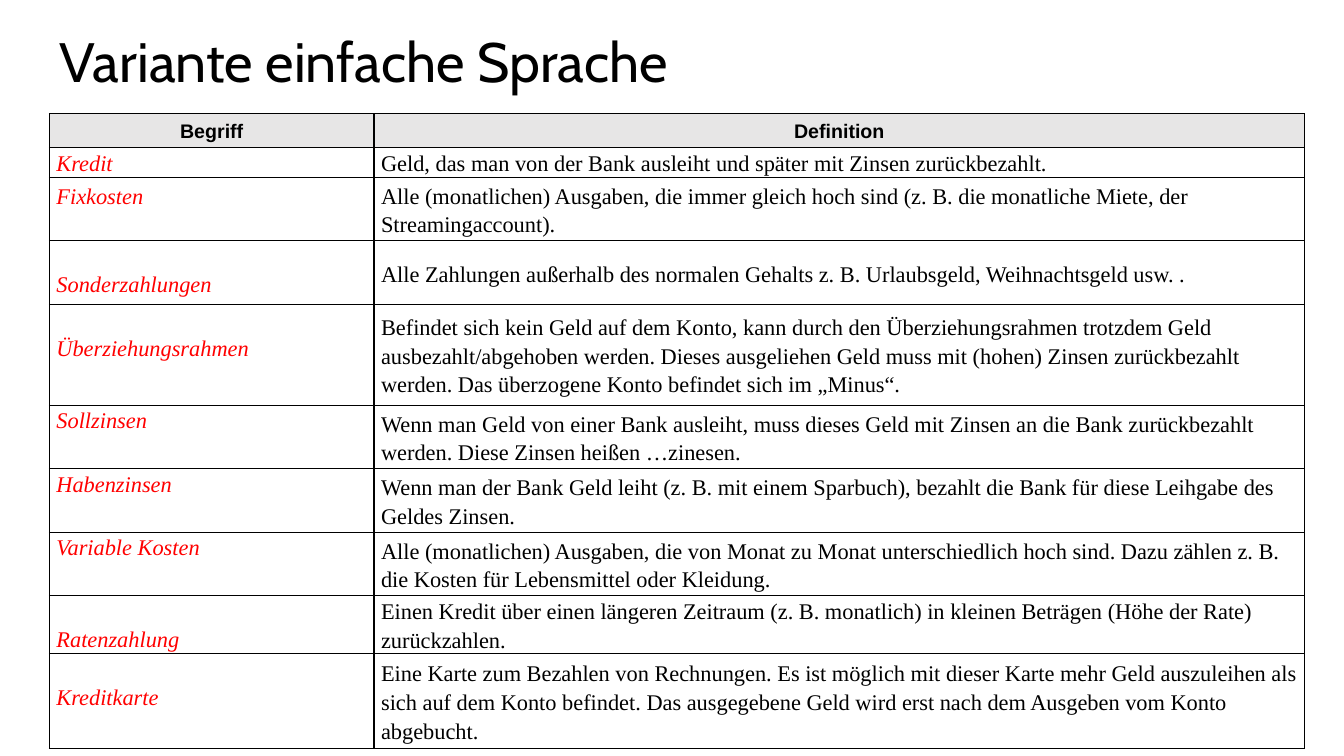
import pptx
import pptx.util
import pptx.dml.color
import pptx.enum.text
import pptx.oxml
import pptx.oxml.ns

Inches, Pt = pptx.util.Inches, pptx.util.Pt
ALIGN = pptx.enum.text.PP_ALIGN
ANCHOR = pptx.enum.text.MSO_ANCHOR
COLORS = {"black": "000000", "red": "FF0000", "grey": "E7E6E6"}
LINE = 0.28  # height of one line of table text

# term, space above the term (None = centred), row height, definition
TERMS = [
    ("Kredit", None, 0.3,
     "Geld, das man von der Bank ausleiht und später mit Zinsen zurückbezahlt."),
    ("Fixkosten", 0.03, 0.63,
     "Alle (monatlichen) Ausgaben, die immer gleich hoch sind (z. B. die monatliche Miete, der "
     "Streamingaccount)."),
    ("Sonderzahlungen", LINE, 0.63,
     "Alle Zahlungen außerhalb des normalen Gehalts z. B. Urlaubsgeld, Weihnachtsgeld usw. ."),
    ("Überziehungsrahmen", LINE, 1,
     "Befindet sich kein Geld auf dem Konto, kann durch den Überziehungsrahmen trotzdem Geld "
     "ausbezahlt/abgehoben werden. Dieses ausgeliehen Geld muss mit (hohen) Zinsen zurückbezahlt "
     "werden. Das überzogene Konto befindet sich im „Minus“."),
    ("Sollzinsen", 0, 0.63,
     "Wenn man Geld von einer Bank ausleiht, muss dieses Geld mit Zinsen an die Bank zurückbezahlt "
     "werden. Diese Zinsen heißen …zinesen."),
    ("Habenzinsen", 0, 0.63,
     "Wenn man der Bank Geld leiht (z. B. mit einem Sparbuch), bezahlt die Bank für diese Leihgabe "
     "des Geldes Zinsen."),
    ("Variable Kosten", 0, 0.63,
     "Alle (monatlichen) Ausgaben, die von Monat zu Monat unterschiedlich hoch sind. Dazu zählen "
     "z. B. die Kosten für Lebensmittel oder Kleidung."),
    ("Ratenzahlung", LINE, 0.57,
     "Einen Kredit über einen längeren Zeitraum (z. B. monatlich) in kleinen Beträgen (Höhe der "
     "Rate) zurückzahlen."),
    ("Kreditkarte", LINE, 0.95,
     "Eine Karte zum Bezahlen von Rechnungen. Es ist möglich mit dieser Karte mehr Geld auszuleihen "
     "als sich auf dem Konto befindet. Das ausgegebene Geld wird erst nach dem Ausgeben vom Konto "
     "abgebucht."),
]


def write(para, text, font, size, color, spacing):
    """Add one styled run to a paragraph and return its font."""
    para.line_spacing = spacing
    run = para.add_run()
    run.text = text
    run.font.name = font
    run.font.size = Pt(size)
    run.font.color.rgb = pptx.dml.color.RGBColor.from_string(COLORS[color])
    return run.font


def frame(cell, top):
    """Set margins, anchor and black borders of a table cell."""
    cell.margin_left = cell.margin_right = Inches(0.07)
    cell.margin_top = Inches(top or 0)
    cell.margin_bottom = 0
    cell.vertical_anchor = ANCHOR.MIDDLE if top is None else ANCHOR.TOP
    props = cell._tc.get_or_add_tcPr()
    for side in ("lnL", "lnR", "lnT", "lnB"):
        props.append(pptx.oxml.parse_xml(
            f'<a:{side} {pptx.oxml.ns.nsdecls("a")} w="{Pt(1)}"><a:solidFill>'
            f'<a:srgbClr val="{COLORS["black"]}"/></a:solidFill></a:{side}>'))


deck = pptx.Presentation()
deck.slide_width, deck.slide_height = Inches(13.33), Inches(7.5)
slide = deck.slides.add_slide(deck.slide_layouts[5])

title = slide.shapes.title
title.left, title.top = Inches(0.49), Inches(0.37)
title.width, title.height = Inches(11.5), Inches(0.54)
title.text_frame.auto_size = pptx.enum.text.MSO_AUTO_SIZE.NONE
title.text_frame.vertical_anchor = ANCHOR.MIDDLE
head = title.text_frame.paragraphs[0]
head.alignment = ALIGN.LEFT
write(head, "Variante einfache Sprache", "Cabin", 39.6, "black", 0.9)

table = slide.shapes.add_table(len(TERMS) + 1, 2, Inches(0.49), Inches(1.13),
                               Inches(12.45), Inches(6.3)).table
table.horz_banding = False
for col, width in zip(table.columns, (3.22, 9.23)):
    col.width = Inches(width)

table.rows[0].height = Inches(0.33)
for cell, label in zip(table.rows[0].cells, ("Begriff", "Definition")):
    frame(cell, None)
    cell.fill.solid()
    cell.fill.fore_color.rgb = pptx.dml.color.RGBColor.from_string(COLORS["grey"])
    para = cell.text_frame.paragraphs[0]
    para.alignment = ALIGN.CENTER
    write(para, label, "Arial", 14, "black", 1.15).bold = True

for index, (term, top, height, meaning) in enumerate(TERMS, 1):
    table.rows[index].height = Inches(height)
    parts = ((term, top, "red"), (meaning, None, "black"))
    for cell, (text, space, color) in zip(table.rows[index].cells, parts):
        frame(cell, space)
        cell.fill.background()
        para = cell.text_frame.paragraphs[0]
        font = write(para, text, "Times New Roman", 16, color, 1.15)
        font.bold = False
        font.italic = color == "red"

deck.save("out.pptx")
